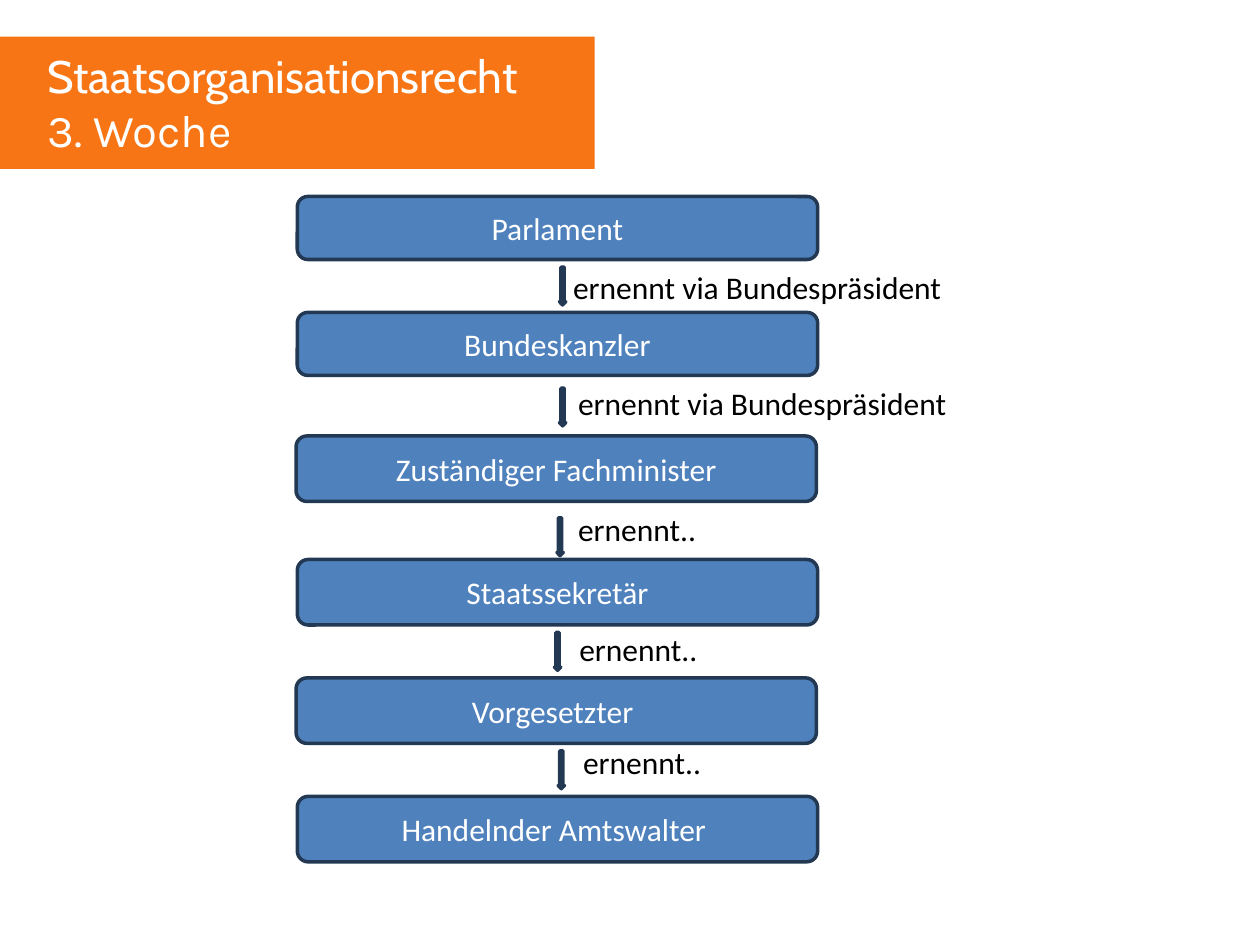
from typing import NamedTuple

from pptx import Presentation
from pptx import util as u
from pptx.dml.color import RGBColor
from pptx.enum import shapes, text

ORANGE = RGBColor(0xF7, 0x75, 0x15)
BLUE = RGBColor(0x4F, 0x81, 0xBD)
NAVY = RGBColor(0x23, 0x39, 0x53)
WHITE = RGBColor(0xFF, 0xFF, 0xFF)
BLACK = RGBColor(0, 0, 0)

SLIDE_WIDTH, SLIDE_HEIGHT = 10, 7.5
OFFICE_WIDTH = 4.13
ARROW_WIDTH, ARROW_HEIGHT = 0.05, 0.3
LABEL_HEIGHT = 0.4


class Area(NamedTuple):
    left: float
    top: float
    width: float
    height: float

    def lengths(self) -> list:
        return [u.Inches(value) for value in self]


class Office(NamedTuple):
    title: str
    left: float
    top: float
    height: float


class Appointment(NamedTuple):
    wording: str
    arrow_left: float
    arrow_top: float
    label_left: float
    label_top: float
    label_width: float


OFFICES = [
    Office("Parlament", 2.36, 1.56, 0.5),
    Office("Bundeskanzler", 2.36, 2.48, 0.5),
    Office("Zuständiger Fachminister", 2.35, 3.46, 0.52),
    Office("Staatssekretär", 2.36, 4.44, 0.52),
    Office("Vorgesetzter ", 2.35, 5.38, 0.52),
    Office("Handelnder Amtswalter ", 2.36, 6.32, 0.52),
]
VIA_PRESIDENT = "ernennt via Bundespräsident"
DIRECT = "ernennt.."
APPOINTMENTS = [
    Appointment(VIA_PRESIDENT, 4.44, 2.12, 4.45, 2.08, 3.54),
    Appointment(VIA_PRESIDENT, 4.44, 3.08, 4.49, 3.0, 3.56),
    Appointment(DIRECT, 4.42, 4.11, 4.49, 4.0, 1.54),
    Appointment(DIRECT, 4.4, 5.02, 4.5, 4.95, 1.54),
    Appointment(DIRECT, 4.43, 5.96, 4.53, 5.85, 1.54),
]


def write(paragraph, wording: str, **font_format) -> None:
    run = paragraph.add_run()
    run.text = wording
    run.font.color.rgb = font_format.pop("color")
    for attribute, value in font_format.items():
        setattr(run.font, attribute, value)


def add_block(slide, preset, area: Area, fill: RGBColor, outline: RGBColor | None = None):
    block = slide.shapes.add_shape(preset, *area.lengths())
    block.shadow.inherit = False
    block.fill.solid()
    block.fill.fore_color.rgb = fill
    if outline is None:
        block.line.fill.background()
    else:
        block.line.color.rgb = outline
        block.line.width = u.Pt(2)
    return block


def add_text_frame(slide, area: Area):
    frame = slide.shapes.add_textbox(*area.lengths()).text_frame
    frame.word_wrap = True
    frame.auto_size = text.MSO_AUTO_SIZE.SHAPE_TO_FIT_TEXT
    return frame


def add_heading(slide) -> None:
    add_block(slide, shapes.MSO_SHAPE.RECTANGLE, Area(0, 0.29, 4.72, 1.05), ORANGE)
    frame = add_text_frame(slide, Area(0.28, 0.33, 4.72, 0.98))
    heading = {"size": u.Pt(26), "color": WHITE}
    write(frame.paragraphs[0], "Staatsorganisationsrecht", name="Cabin", **heading)
    write(frame.add_paragraph(), "3. Woche", name="Karla", **heading)


def add_office(slide, office: Office) -> None:
    area = Area(office.left, office.top, OFFICE_WIDTH, office.height)
    frame = add_block(slide, shapes.MSO_SHAPE.ROUNDED_RECTANGLE, area, BLUE, NAVY).text_frame
    frame.vertical_anchor = text.MSO_ANCHOR.MIDDLE
    paragraph = frame.paragraphs[0]
    paragraph.alignment = text.PP_ALIGN.CENTER
    write(paragraph, office.title, name="Calibri", size=u.Pt(18), color=WHITE)


def add_appointment(slide, step: Appointment) -> None:
    arrow = Area(step.arrow_left, step.arrow_top, ARROW_WIDTH, ARROW_HEIGHT)
    add_block(slide, shapes.MSO_SHAPE.DOWN_ARROW, arrow, BLUE, NAVY)
    label = Area(step.label_left, step.label_top, step.label_width, LABEL_HEIGHT)
    frame = add_text_frame(slide, label)
    write(frame.paragraphs[0], step.wording, name="Calibri", size=u.Pt(18), color=BLACK)


def main() -> None:
    deck = Presentation()
    deck.slide_width = u.Inches(SLIDE_WIDTH)
    deck.slide_height = u.Inches(SLIDE_HEIGHT)
    slide = deck.slides.add_slide(deck.slide_layouts[6])
    add_heading(slide)
    for office in OFFICES:
        add_office(slide, office)
    for step in APPOINTMENTS:
        add_appointment(slide, step)
    deck.save("out.pptx")


if __name__ == "__main__":
    main()
